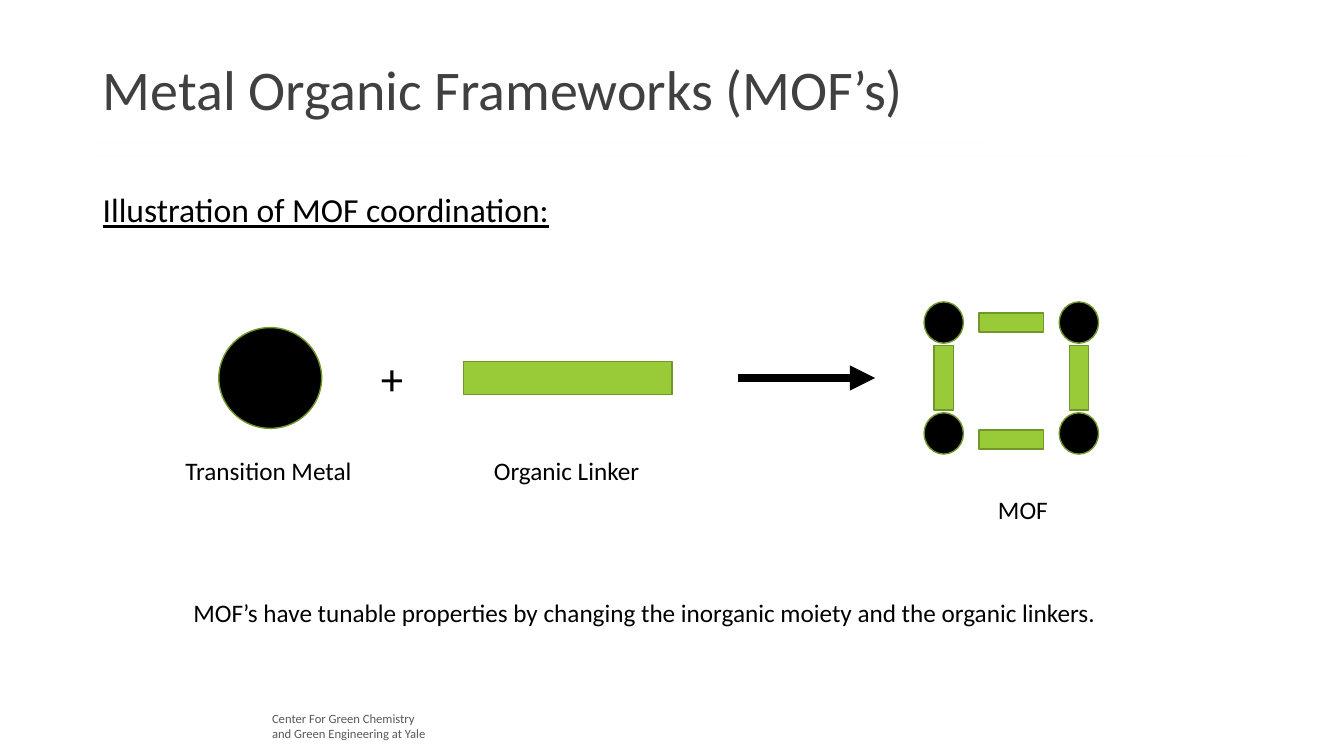
from itertools import product
from lxml import etree
from pptx import Presentation
from pptx.dml.color import RGBColor
from pptx.enum import shapes, text
from pptx.oxml.ns import qn
from pptx.util import Inches, Pt

# Content
COLORS = {"title": "404040", "footer": "595959", "black": "000000",
          "linker": "99CB38", "outline": "719629"}
FONT = "Calibri"
TITLE = "Metal Organic Frameworks (MOF’s)"
FOOTER = ["Center For Green Chemistry", "and Green Engineering at Yale"]
LABELS = [  # text, left, top, width, height, size, underlined
    ("Illustration of MOF coordination:", 0.92, 1.83, 4.67, 0.5, 24, True),
    ("+", 3.68, 3.43, 0.43, 0.64, 32, False),
    ("Transition Metal", 1.74, 4.47, 1.87, 0.4, 18, False),
    ("Organic Linker", 4.8, 4.47, 1.66, 0.4, 18, False),
    ("MOF", 9.8, 4.85, 0.7, 0.4, 18, False),
    ("MOF’s have tunable properties by changing the inorganic moiety "
     "and the organic linkers.", 1.82, 5.88, 9.32, 0.4, 18, False),
]
RULES = [  # left, right, y, colour
    (0.92, 9.77, 1.41, "4EB3CF"),
    (0.9, 11.71, 1.48, "44C1A3"),
    (0.91, 12.42, 1.55, "37A76F"),
]
RULE_ALPHA = 2  # percent, barely visible

# Framework geometry
AXIS_Y = 3.75
MOF_X = 10.03
HALF_W, HALF_H = 0.67, 0.55
LINKER_OFFSET_Y = 0.58
NODE = (0.39, 0.41)
LINKER = (0.19, 0.64)

prs = Presentation()
prs.slide_width, prs.slide_height = Inches(13.33), Inches(7.5)
slide = prs.slides.add_slide(prs.slide_layouts[5])


def rgb(value):
    return RGBColor.from_string(value)


def style(p, size, color):
    p.font.name, p.font.size = FONT, Pt(size)
    p.font.color.rgb = rgb(color)


def add_text(lines, left, top, width, height, size, color, wrap=False):
    box = slide.shapes.add_textbox(*map(Inches, (left, top, width, height)))
    tf = box.text_frame
    tf.word_wrap = wrap
    tf.auto_size = text.MSO_AUTO_SIZE.SHAPE_TO_FIT_TEXT
    tf.text = "\n".join(lines)
    for p in tf.paragraphs:
        style(p, size, color)
    return tf


def add_part(kind, center, size, fill, rotation=0):
    (cx, cy), (w, h) = center, size
    sp = slide.shapes.add_shape(
        kind, *map(Inches, (cx - w / 2, cy - h / 2, w, h)))
    sp.rotation = rotation
    sp.shadow.inherit = False
    sp.fill.solid()
    sp.fill.fore_color.rgb = rgb(fill)
    sp.line.color.rgb = rgb(COLORS["outline"])
    sp.line.width = Pt(1)


def add_metal(center, size):
    add_part(shapes.MSO_SHAPE.OVAL, center, size, COLORS["black"])


def add_linker(center, size, rotation=0):
    add_part(shapes.MSO_SHAPE.RECTANGLE, center, size, COLORS["linker"], rotation)


def add_line(left, right, y, color, width):
    line = slide.shapes.add_connector(
        shapes.MSO_CONNECTOR.STRAIGHT, *map(Inches, (left, y, right, y)))
    line.line.color.rgb = rgb(color)
    line.line.width = Pt(width)
    etree.SubElement(line._element.spPr, qn("a:effectLst"))
    return line


# Footer and faint rules
add_text(FOOTER, 2.6, 7, 1.86, 0.4, 9, COLORS["footer"], wrap=True)
for left, right, y, color in RULES:
    rule = add_line(left, right, y, color, 0.5)
    clr = next(rule._element.spPr.iter(qn("a:srgbClr")))
    etree.SubElement(clr, qn("a:alpha"), val=str(RULE_ALPHA * 1000))

# Title
title = slide.shapes.title
title.left, title.top, title.width, title.height = map(
    Inches, (0.92, 0.19, 11.5, 1.45))
tf = title.text_frame
tf.text = TITLE
tf.vertical_anchor = text.MSO_ANCHOR.MIDDLE
p = tf.paragraphs[0]
p.alignment = text.PP_ALIGN.LEFT
p.line_spacing = 0.9
style(p, 40, COLORS["title"])

# Building blocks and reaction arrow
add_metal((2.68, AXIS_Y), (1.02, 1))
add_linker((5.63, AXIS_Y), (2.07, 0.33))
arrow = add_line(7.32, 8.68, AXIS_Y, COLORS["black"], 6)
etree.SubElement(arrow.line._get_or_add_ln(), qn("a:tailEnd"), type="triangle")

# Framework: metals at the corners, linkers along the sides
for sx, sy in product((-1, 1), repeat=2):
    add_metal((MOF_X + sx * HALF_W, AXIS_Y + sy * HALF_H), NODE)
for side in (-1, 1):
    add_linker((MOF_X + side * HALF_W, AXIS_Y), LINKER)
    add_linker((MOF_X, AXIS_Y + 0.03 + side * LINKER_OFFSET_Y), LINKER, 90)

# Labels
for label, left, top, width, height, size, underlined in LABELS:
    tf = add_text([label], left, top, width, height, size, COLORS["black"])
    if underlined:
        tf.paragraphs[0].font.underline = True

prs.save("out.pptx")
